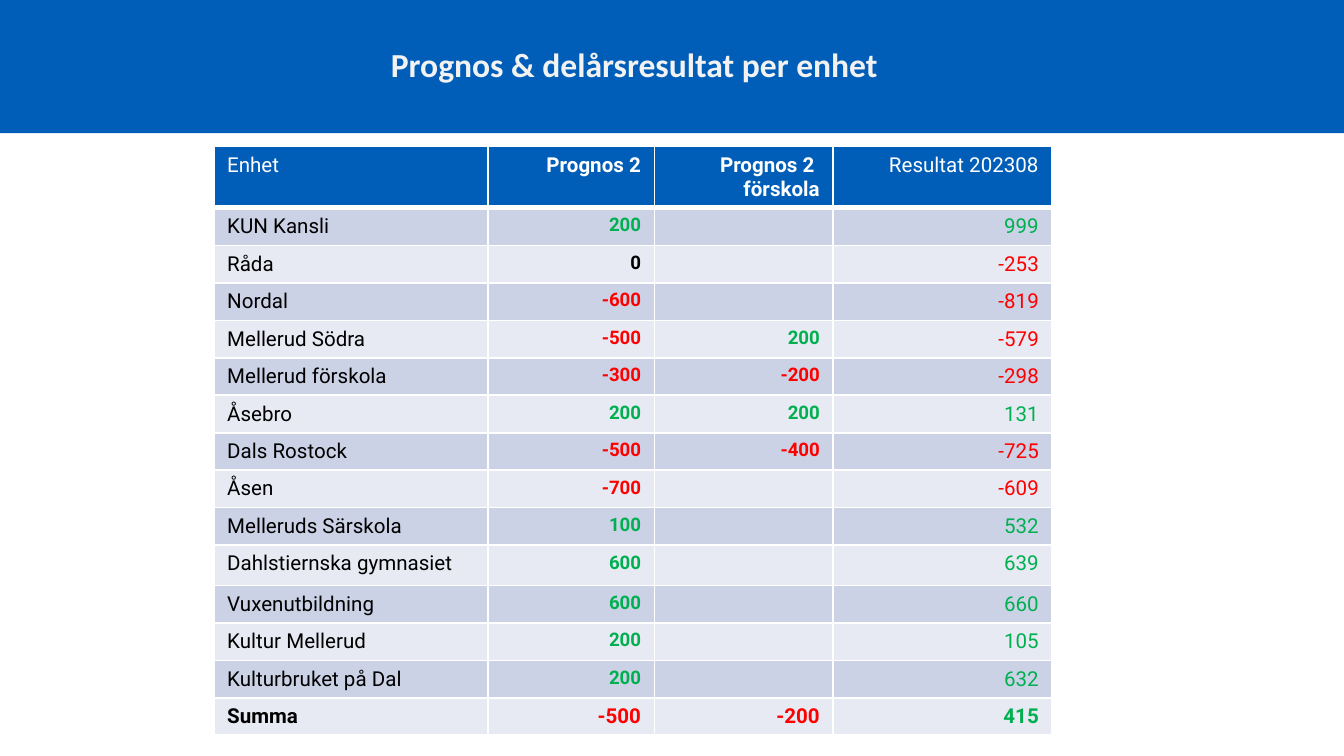
from dataclasses import dataclass

from lxml import etree
from pptx import Presentation
from pptx.dml.color import RGBColor
from pptx.enum.shapes import MSO_SHAPE
from pptx.enum.text import PP_ALIGN
from pptx.oxml.ns import qn
from pptx.util import Inches, Pt

RECT = MSO_SHAPE.RECTANGLE
LEFT, RIGHT = PP_ALIGN.LEFT, PP_ALIGN.RIGHT


@dataclass(frozen=True)
class Theme:
    blue: str = "005EB8"
    white: str = "FFFFFF"
    pale: str = "F2F2F2"
    black: str = "000000"
    green: str = "00B050"
    red: str = "FF0000"
    bands: tuple = ("E7EAF3", "CCD2E6")
    head: str = "Calibri"
    body: str = "Roboto"
    title: int = 18
    text: int = 11
    small: int = 10


T = Theme()


def style(par, face, size, color, bold):
    par.font.name = face
    par.font.size = Pt(size)
    par.font.bold = bold
    par.font.color.rgb = RGBColor.from_string(color)


def edge(cell, **sides):
    """Draw white cell borders; each side is given its width in points."""
    props = cell._tc.get_or_add_tcPr()
    for spot, (side, width) in enumerate(sides.items()):
        line = etree.Element(qn(f"a:ln{side}"), w=str(Pt(width)))
        fill = etree.SubElement(line, qn("a:solidFill"))
        etree.SubElement(fill, qn("a:srgbClr"), val=T.white)
        props.insert(spot, line)


deck = Presentation()
deck.slide_width = Inches(10)
deck.slide_height = deck.slide_width * 9 // 16
slide = deck.slides.add_slide(deck.slide_layouts[6])

# Title band
band = slide.shapes.add_shape(RECT, 0, 0, deck.slide_width, Inches(0.99))
band.shadow.inherit = False
band.fill.solid()
band.fill.fore_color.rgb = RGBColor.from_string(T.blue)
band.line.fill.background()

# Forecast and result per unit
rows = [
    ("Enhet", "Prognos 2", "Prognos 2 \nförskola", "Resultat 202308"),
    ("KUN Kansli", "200", "", "999"),
    ("Råda", "0", "", "-253"),
    ("Nordal", "-600", "", "-819"),
    ("Mellerud Södra", "-500", "200", "-579"),
    ("Mellerud förskola", "-300", "-200", "-298"),
    ("Åsebro", "200", "200", "131"),
    ("Dals Rostock", "-500", "-400", "-725"),
    ("Åsen", "-700", "", "-609"),
    ("Melleruds Särskola", "100", "", "532"),
    ("Dahlstiernska gymnasiet", "600", "", "639"),
    ("Vuxenutbildning", "600", "", "660"),
    ("Kultur Mellerud", "200", "", "105"),
    ("Kulturbruket på Dal", "200", "", "632"),
    ("Summa", "-500", "-200", "415"),
]
widths = (2.04, 1.24, 1.33, 1.63)
last = len(rows) - 1
tall = {0: 0.41, 10: 0.3}

grid = slide.shapes.add_table(
    len(rows), len(widths), Inches(1.59), Inches(1.09), Inches(6.24), Inches(4.45)
).table
for col, width in zip(grid.columns, widths):
    col.width = Inches(width)

for r, row in enumerate(rows):
    grid.rows[r].height = Inches(tall.get(r, 0.25))
    for c, value in enumerate(row):
        cell = grid.cell(r, c)
        cell.fill.solid()
        fill = T.bands[r % 2] if r else T.blue
        cell.fill.fore_color.rgb = RGBColor.from_string(fill)
        edge(cell, L=1, R=1, T=3 if r == 1 else 1, B=1 if r else 3)
        cell.text = value
        middle = c in (1, 2)
        size = T.small if middle and 0 < r < last else T.text
        if r == 0:
            color = T.white
        elif c == 0 or value in ("", "0"):
            color = T.black
        else:
            color = T.red if value.startswith("-") else T.green
        for par in cell.text_frame.paragraphs:
            par.alignment = RIGHT if c else LEFT
            style(par, T.body, size, color, middle or r == last)

# Title
box = slide.shapes.add_textbox(Inches(2.81), Inches(0.28), Inches(4.4), Inches(0.4))
box.text_frame.word_wrap = True
title = box.text_frame.paragraphs[0]
title.text = "Prognos & delårsresultat per enhet"
style(title, T.head, T.title, T.pale, True)

deck.save("out.pptx")
